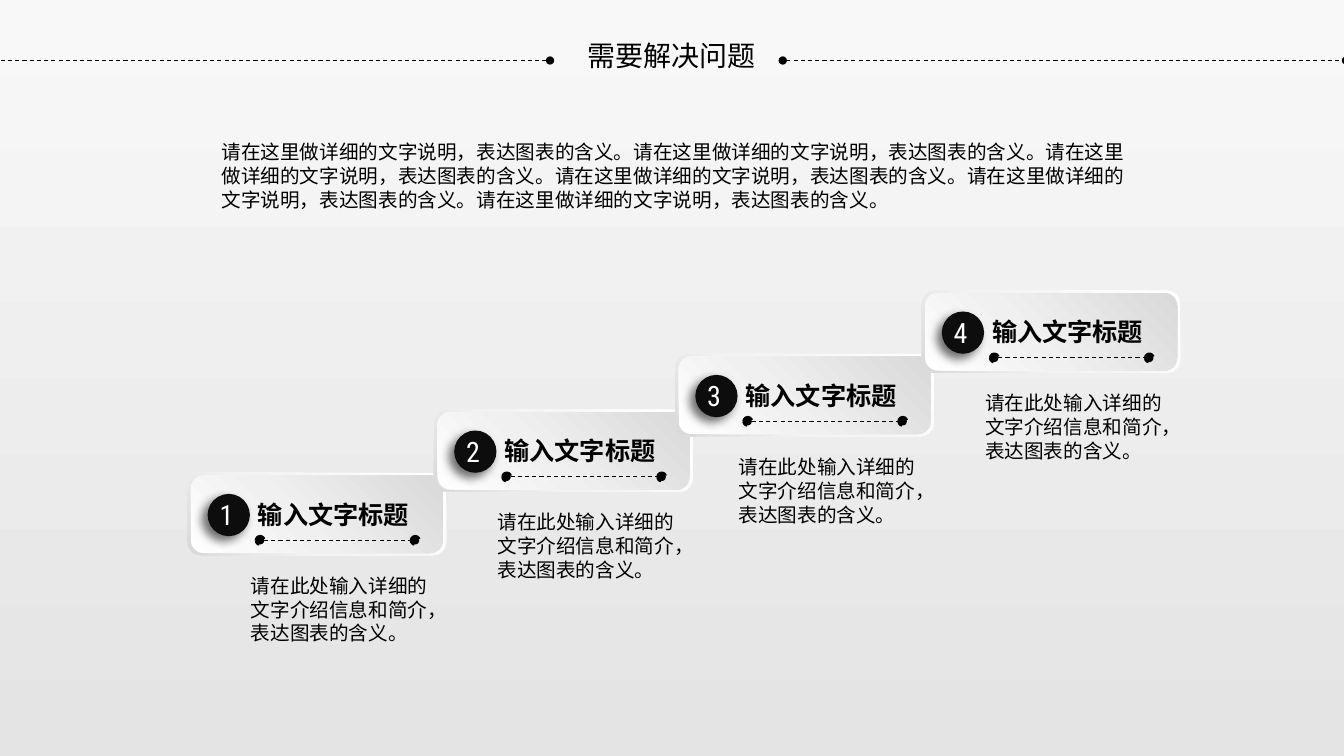
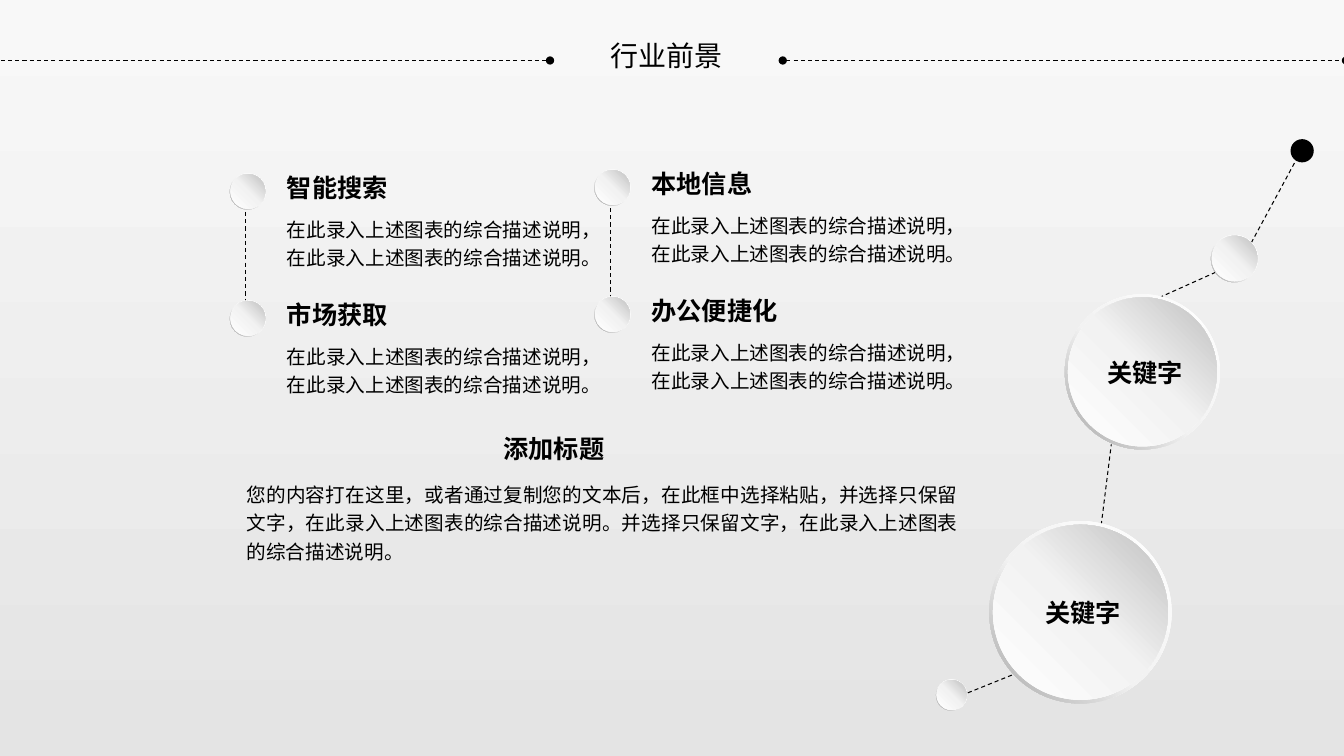
from lxml import etree
from pptx import Presentation
from pptx.dml.color import RGBColor
from pptx.enum import dml, shapes, text
from pptx.oxml.ns import qn
from pptx.util import Pt

BLACK = RGBColor(0x00, 0x00, 0x00)
INK = RGBColor(0x0D, 0x0D, 0x0D)
WHITE = RGBColor(0xFF, 0xFF, 0xFF)
MIST = RGBColor(0xF8, 0xF8, 0xF8)
FOG = RGBColor(0xE4, 0xE4, 0xE4)
PEARL = RGBColor(0xF2, 0xF2, 0xF2)
PALE = RGBColor(0xF0, 0xF0, 0xF0)
SILVER = RGBColor(0xD9, 0xD9, 0xD9)
GREY = RGBColor(0xBF, 0xBF, 0xBF)
STEEL = RGBColor(0xA6, 0xA6, 0xA6)

BACKDROP = ([(0, MIST), (100, FOG)], 90)
CARD_RIM = ([(0, WHITE), (62, PEARL), (100, SILVER)], 135)
CARD_FACE = ([(0, WHITE), (42, PALE), (100, SILVER)], 315)
DISC_RIM = ([(0, WHITE), (55, PEARL), (100, STEEL)], 135)
DISC_FACE = ([(0, WHITE), (51, PEARL), (100, GREY)], 315)

BODY_FONT = "Noto Sans CJK SC"
NUMBER_FONT = "Roboto Condensed"
SHAPE = shapes.MSO_SHAPE
ALIGN = text.PP_ALIGN
DISC = 25.9
ROW_STEP = 90.7

INTRO = [
    "请在这里做详细的文字说明，表达图表的含义。请在这里做详细的文字说明，表达图表的含义。请在这里",
    "做详细的文字说明，表达图表的含义。请在这里做详细的文字说明，表达图表的含义。请在这里做详细的",
    "文字说明，表达图表的含义。请在这里做详细的文字说明，表达图表的含义。",
]
STEP_TITLE = "输入文字标题"
STEP_TEXT = "请在此处输入详细的文字介绍信息和简介，表达图表的含义。"
STEPS = [(134, 337.7), (310.2, 292.4), (482.5, 252.7), (658.7, 207.4)]

TOPIC_TEXT = "在此录入上述图表的综合描述说明，在此录入上述图表的综合描述说明。"
TOPIC_COLUMNS = [
    (164.2, 123.8, ["智能搜索", "市场获取"]),
    (424.8, 121, ["本地信息", "办公便捷化"]),
]
SUMMARY = (
    "您的内容打在这里，或者通过复制您的文本后，在此框中选择粘贴，并选择只保留文字，"
    "在此录入上述图表的综合描述说明。并选择只保留文字，在此录入上述图表的综合描述说明。"
)
CHAIN_LINKS = [
    (686.9, 496.8, 735.1, 477.4),
    (787, 375.1, 794.2, 317.5),
    (814.3, 218.9, 877, 190.8),
    (894.2, 173.5, 928.1, 110.9),
]
CHAIN_DISCS = [
    (668.9, 485.3, 22.3, None),
    (707, 372.2, 130.3, "关键字"),
    (761, 210.2, 110.9, "关键字"),
    (865.4, 167.8, 33.8, None),
]


def paint(fill, root, paint_style):
    if isinstance(paint_style, RGBColor):
        fill.solid()
        fill.fore_color.rgb = paint_style
        return
    stops, angle = paint_style
    fill.gradient()
    fill.gradient_angle = 360 - angle
    stop_list = root.find(".//" + qn("a:gsLst"))
    for old in list(stop_list):
        stop_list.remove(old)
    for position, color in stops:
        stop = etree.SubElement(stop_list, qn("a:gs"), pos=str(position * 1000))
        etree.SubElement(stop, qn("a:srgbClr"), val=str(color))


def dash_line(line, width):
    line.color.rgb = BLACK
    line.width = Pt(width)
    line.dash_style = dml.MSO_LINE.DASH


def add_figure(s, kind, x, y, w, h, paint_style):
    sp = s.shapes.add_shape(kind, Pt(x), Pt(y), Pt(w), Pt(h))
    sp.shadow.inherit = False
    paint(sp.fill, sp.element, paint_style)
    sp.line.fill.background()
    return sp


def add_dashes(s, x1, y1, x2, y2, dotted_ends=False):
    line = s.shapes.add_connector(
        shapes.MSO_CONNECTOR.STRAIGHT, Pt(x1), Pt(y1), Pt(x2), Pt(y2)
    )
    dash_line(line.line, 0.75)
    if dotted_ends:
        ln = line.element.spPr.find(qn("a:ln"))
        for end in ("a:headEnd", "a:tailEnd"):
            etree.SubElement(ln, qn(end), type="oval")
    etree.SubElement(line.element.spPr, qn("a:effectLst"))


def add_text(s, x, y, w, h, paragraphs, size=14, bold=False, color=BLACK,
             font=BODY_FONT, align=ALIGN.LEFT, spacing=None,
             anchor=text.MSO_ANCHOR.TOP):
    tf = s.shapes.add_textbox(Pt(x), Pt(y), Pt(w), Pt(h)).text_frame
    tf.word_wrap = True
    tf.vertical_anchor = anchor
    for i, content in enumerate(paragraphs):
        p = tf.paragraphs[0] if i == 0 else tf.add_paragraph()
        p.alignment = align
        if spacing:
            p.line_spacing = Pt(spacing)
        r = p.add_run()
        r.text = content
        r.font.size = Pt(size)
        r.font.bold = bold
        r.font.color.rgb = color
        r.font.name = font
        etree.SubElement(r.font._element, qn("a:ea"), typeface=font)


def add_heading(s, x, y, w, content, align=ALIGN.LEFT):
    add_text(s, x, y, w, 28.8, [content], size=18, bold=True, align=align)


def add_titled_slide(prs, title, left, width):
    s = prs.slides.add_slide(prs.slide_layouts[6])
    add_text(s, left, 20.9, width, 36.7, [title], size=20,
             align=ALIGN.CENTER, anchor=text.MSO_ANCHOR.MIDDLE)
    for start, end in ((-7.2, 393.1), (559.4, 961.9)):
        add_dashes(s, start, 43.2, end, 43.2, dotted_ends=True)
    return s


def add_shadow(sp):
    effects = sp.element.spPr.find(qn("a:effectLst"))
    shadow = etree.SubElement(
        effects, qn("a:outerShdw"), blurRad=str(Pt(7)), dist=str(Pt(5)),
        dir=str(135 * 60000), algn="tr", rotWithShape="0",
    )
    color = etree.SubElement(shadow, qn("a:srgbClr"), val=str(BLACK))
    etree.SubElement(color, qn("a:alpha"), val="57000")


def add_step(s, x, y, number):
    add_figure(s, SHAPE.ROUNDED_RECTANGLE, x, y, 185, 59, CARD_RIM)
    add_figure(s, SHAPE.ROUNDED_RECTANGLE, x + 2.5, y + 2, 180, 55.4, CARD_FACE)
    add_shadow(add_figure(s, SHAPE.OVAL, x + 14.4, y + 15.1, 30.2, 30.2, INK))
    add_heading(s, x + 43.2, y + 15.1, 152.6, STEP_TITLE)
    add_text(s, x + 10.5, y + 14.4, 34.6, 31.7, [str(number)], size=20,
             color=WHITE, font=NUMBER_FONT, align=ALIGN.CENTER)
    add_dashes(s, x + 54.7, y + 48.3, x + 159.8, y + 48.3)
    for dx in (49, 159.8):
        dot = add_figure(s, SHAPE.OVAL, x + dx, y + 45.4, 5.8, 5.8, BLACK)
        dash_line(dot.line, 2)
    add_text(s, x + 38.2, y + 68.4, 147.6, 118.8, [STEP_TEXT], spacing=17)


def add_disc(s, x, y, size):
    rim = add_figure(s, SHAPE.DONUT, x, y, size, size, DISC_RIM)
    rim.adjustments[0] = 0.05
    inner = size * 0.96
    inset = (size - inner) / 2
    add_figure(s, SHAPE.OVAL, x + inset, y + inset, inner, inner, DISC_FACE)


def add_topic_column(s, x, y, titles):
    add_dashes(s, x + 11.5, y + 17.3, x + 11.5, y + 95)
    for row, title in enumerate(titles):
        top = y + row * ROW_STEP
        add_disc(s, x, top, DISC)
        add_heading(s, x + 33.8, top - 4.3, 110, title)
        add_text(s, x + 33.8, top + 24.5, 232.6, 48.2, [TOPIC_TEXT], spacing=20.4)


def add_keyword_chain(s):
    for link in CHAIN_LINKS:
        add_dashes(s, *link)
    for x, y, size, keyword in CHAIN_DISCS:
        add_disc(s, x, y, size)
        if keyword:
            add_heading(s, x + size / 2 - 58, y + size / 2 - 14, 120, keyword,
                        ALIGN.CENTER)
    add_figure(s, SHAPE.OVAL, 922.3, 99.4, 16.6, 16.6, BLACK)


def build_problems(prs):
    s = add_titled_slide(prs, "需要解决问题", 411.8, 136.1)
    add_text(s, 151.2, 96.5, 789.8, 58.3, INTRO, spacing=17)
    for number, (x, y) in enumerate(STEPS, 1):
        add_step(s, x, y, number)


def build_prospects(prs):
    s = add_titled_slide(prs, "行业前景", 429.1, 94.4)
    for column in TOPIC_COLUMNS:
        add_topic_column(s, *column)
    add_heading(s, 352.8, 306, 110, "添加标题")
    add_text(s, 169.2, 337.7, 522.7, 67.7, [SUMMARY], align=ALIGN.JUSTIFY,
             spacing=20.4)
    add_keyword_chain(s)


def main():
    prs = Presentation()
    prs.slide_width, prs.slide_height = Pt(960.5), Pt(540)
    master = prs.slide_master
    paint(master.background.fill, master.element, BACKDROP)
    build_problems(prs)
    build_prospects(prs)
    prs.save("out.pptx")


if __name__ == "__main__":
    main()
